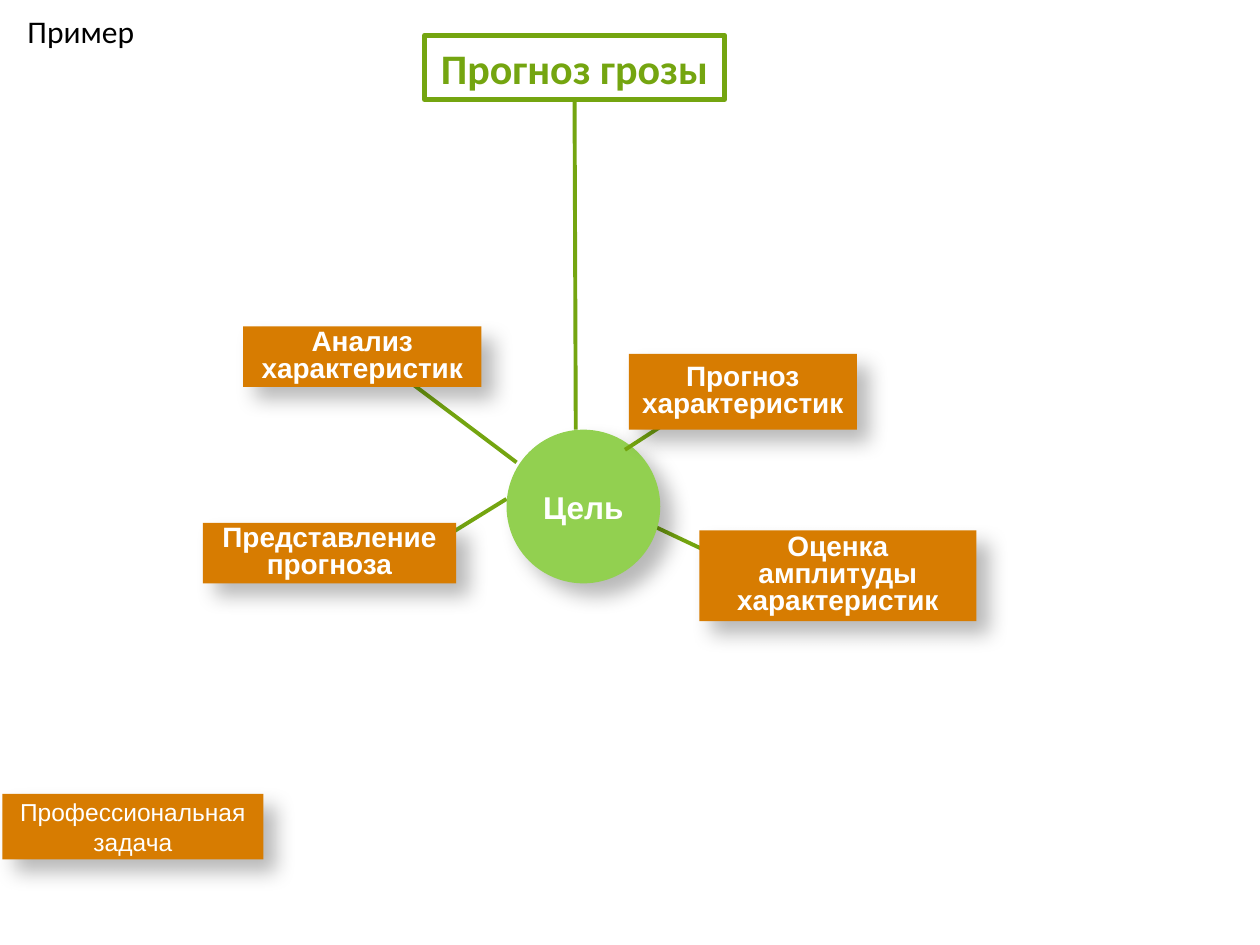
from lxml import etree
from pptx import Presentation
from pptx.dml.color import RGBColor
from pptx.enum.shapes import MSO_CONNECTOR as Connector, MSO_SHAPE as Shape
from pptx.enum.text import MSO_ANCHOR as Anchor, MSO_AUTO_SIZE as AutoSize, PP_ALIGN as Align
from pptx.oxml import parse_xml
from pptx.oxml.ns import nsdecls, qn
from pptx.util import Inches, Pt

COLORS = {
    "orange": "D77C01",
    "green": "74A510",
    "light_green": "92D050",
    "white": "FFFFFF",
    "black": "000000",
}
SHADOW = f"""<a:effectLst {nsdecls('a')}>
  <a:outerShdw blurRad="{Pt(11.8)}" dist="{Pt(10)}" dir="2700000" algn="tl" rotWithShape="0">
    <a:srgbClr val="{COLORS['black']}"><a:alpha val="28000"/></a:srgbClr>
  </a:outerShdw>
</a:effectLst>"""


def color(name):
    return RGBColor.from_string(COLORS[name])


class DiagramSlide:
    """Holds the diagram style and the slide being drawn."""

    node_font = {"name": "Arial", "size": Pt(16), "bold": True}
    title_font = {"name": "Calibri", "size": Pt(24), "bold": True}
    label_font = {"name": "Calibri", "size": Pt(18), "bold": False}

    def __init__(self, presentation):
        self.slide = presentation.slides.add_slide(presentation.slide_layouts[5])

    def set_text(self, shape, text, font, font_color, align=Align.CENTER, spacing=1.0):
        frame = shape.text_frame
        frame.text = text
        paragraph = frame.paragraphs[0]
        paragraph.alignment = align
        paragraph.line_spacing = spacing
        run_font = paragraph.runs[0].font
        for name, value in font.items():
            setattr(run_font, name, value)
        run_font.color.rgb = color(font_color)

    def title(self, text, left, top, width, height):
        shape = self.slide.shapes.title
        place = {"left": left, "top": top, "width": width, "height": height}
        for name, value in place.items():
            setattr(shape, name, Inches(value))
        shape.fill.solid()
        shape.fill.fore_color.rgb = color("white")
        shape.line.color.rgb = color("green")
        shape.line.width = Pt(3)
        self.set_text(shape, text, self.title_font, "green")
        frame_format = {"auto_size": AutoSize.NONE, "word_wrap": False,
                        "vertical_anchor": Anchor.MIDDLE}
        for name, value in frame_format.items():
            setattr(shape.text_frame, name, value)

    def label(self, text, *box):
        shape = self.slide.shapes.add_textbox(*map(Inches, box))
        shape.text_frame.word_wrap = True
        self.set_text(shape, text, self.label_font, "black", Align.LEFT)

    def node(self, text, *box, kind=Shape.RECTANGLE, fill="orange", spacing=0.8, **font):
        shape = self.slide.shapes.add_shape(kind, *map(Inches, box))
        shape.fill.solid()
        shape.fill.fore_color.rgb = color(fill)
        shape.line.fill.background()
        shape._element.spPr.append(parse_xml(SHADOW))
        shape.text_frame.word_wrap = True
        shape.text_frame.vertical_anchor = Anchor.MIDDLE
        self.set_text(shape, text, {**self.node_font, **font}, "white", spacing=spacing)

    def line(self, *ends):
        connector = self.slide.shapes.add_connector(Connector.STRAIGHT, *map(Inches, ends))
        connector.line.color.rgb = color("green")
        connector.line.width = Pt(2.25)
        etree.SubElement(connector._element.spPr, qn("a:effectLst"))

    def step(self, text, ends, box):
        self.line(*ends)
        self.node(text, *box)


def main():
    presentation = Presentation()
    presentation.slide_width = Inches(10)
    presentation.slide_height = Inches(7.5)
    diagram = DiagramSlide(presentation)

    # Title, corner label and the professional task
    diagram.title("Прогноз грозы", 3.37, 0.28, 2.38, 0.51)
    diagram.label("Пример", 0.12, 0.05, 1.5, 0.4)
    diagram.node("Профессиональная задача", 0.02, 6.3, 2.07, 0.52,
                 spacing=1.0, size=Pt(14), bold=False)

    # Steps whose lines end behind the goal: text, line ends, box
    diagram.line(4.56, 0.78, 4.57, 3.41)
    steps = [
        ("Анализ характеристик", (3.13, 2.94, 4.1, 3.67), (1.93, 2.59, 1.89, 0.48)),
        ("Оценка амплитуды характеристик", (5.07, 4.12, 5.79, 4.46), (5.55, 4.21, 2.2, 0.72)),
        ("Представление прогноза", (3.21, 4.46, 4.02, 3.96), (1.61, 4.15, 2.01, 0.48)),
    ]
    for step in steps:
        diagram.step(*step)

    # Goal in the centre, then the step whose line lies over it
    diagram.node("Цель", 4.02, 3.41, 1.22, 1.22, kind=Shape.OVAL,
                 fill="light_green", spacing=1.0, size=Pt(18))
    diagram.step("Прогноз характеристик", (5.7, 3.09, 4.96, 3.57), (4.99, 2.81, 1.81, 0.6))

    presentation.save("out.pptx")


if __name__ == "__main__":
    main()
